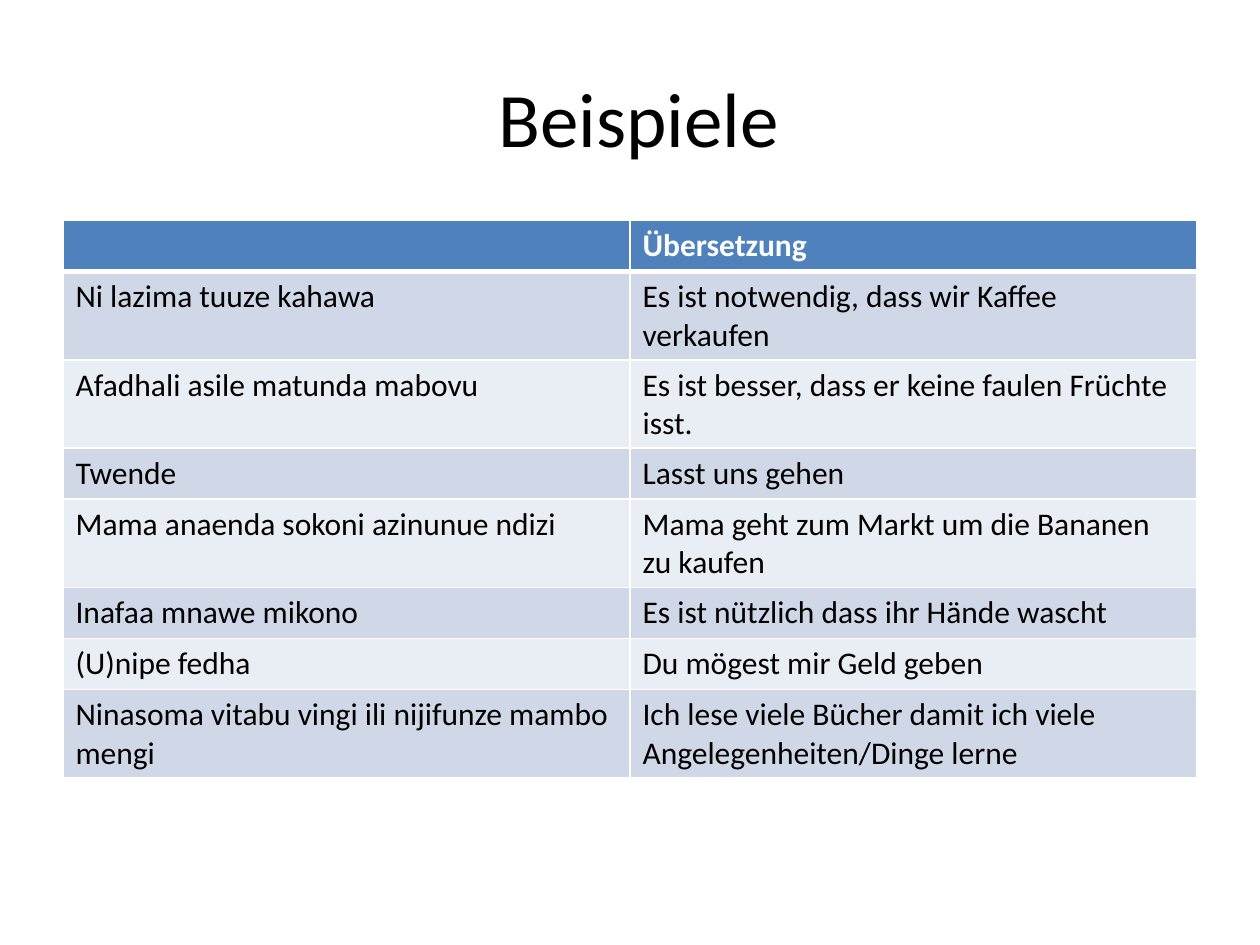
from lxml import etree
from pptx import Presentation
from pptx.dml.color import RGBColor
from pptx.enum.text import MSO_ANCHOR, PP_ALIGN
from pptx.oxml.ns import qn
from pptx.util import Pt

CENTER = PP_ALIGN.CENTER
MIDDLE = MSO_ANCHOR.MIDDLE
FONT = "Calibri"
WHITE, BLACK = "FFFFFF", "000000"
HEADER_FILL = "4F81BD"
BAND_FILLS = ("E9EDF4", "D0D8E8")

EXAMPLES = [
    ("", "Übersetzung"),
    ("Ni lazima tuuze kahawa", "Es ist notwendig, dass wir Kaffee verkaufen"),
    ("Afadhali asile matunda mabovu", "Es ist besser, dass er keine faulen Früchte isst."),
    ("Twende", "Lasst uns gehen"),
    ("Mama anaenda sokoni azinunue ndizi", "Mama geht zum Markt um die Bananen zu kaufen"),
    ("Inafaa mnawe mikono", "Es ist nützlich dass ihr Hände wascht"),
    ("(U)nipe fedha", "Du mögest mir Geld geben"),
    ("Ninasoma vitabu vingi ili nijifunze mambo mengi",
     "Ich lese viele Bücher damit ich viele Angelegenheiten/Dinge lerne"),
]


def color(value):
    return RGBColor.from_string(value)


def style_font(font, size, value, bold=False):
    font.name = FONT
    font.size = Pt(size)
    font.bold = bold
    font.color.rgb = color(value)


def add_borders(cell, widths):
    properties = cell._tc.get_or_add_tcPr()
    for side, width in widths.items():
        line = etree.SubElement(properties, qn(f"a:ln{side}"), w=str(Pt(width)))
        fill = etree.SubElement(line, qn("a:solidFill"))
        etree.SubElement(fill, qn("a:srgbClr"), val=WHITE)


def add_title(page, text, left, top, width, height):
    box = page.shapes.add_textbox(Pt(left), Pt(top), Pt(width), Pt(height))
    frame = box.text_frame
    frame.word_wrap = True
    frame.vertical_anchor = MIDDLE
    frame.text = text
    para = frame.paragraphs[0]
    para.alignment = CENTER
    style_font(para.runs[0].font, 44, BLACK)


def add_examples(page, rows, left, top, width, row_height):
    columns = len(rows[0])
    table = page.shapes.add_table(
        len(rows), columns, Pt(left), Pt(top), Pt(width), Pt(row_height * len(rows))
    ).table
    for column in table.columns:
        column.width = Pt(width / columns)
    for row_index, texts in enumerate(rows):
        table.rows[row_index].height = Pt(row_height)
        header = row_index == 0
        widths = {"L": 1, "R": 1, "T": 3 if row_index == 1 else 1, "B": 3 if header else 1}
        for column_index, text in enumerate(texts):
            cell = table.cell(row_index, column_index)
            add_borders(cell, widths)
            cell.fill.solid()
            cell.fill.fore_color.rgb = color(HEADER_FILL if header else BAND_FILLS[row_index % 2])
            cell.text_frame.text = text
            for span in cell.text_frame.paragraphs[0].runs:
                style_font(span.font, 18, WHITE if header else BLACK, header)


def main():
    deck = Presentation()
    deck.slide_width, deck.slide_height = Pt(720), Pt(540)
    page = deck.slides.add_slide(deck.slide_layouts[6])
    add_title(page, " Beispiele", 36, 21.6, 648, 90)
    add_examples(page, EXAMPLES, 36, 126, 648, 29.2)
    deck.save("out.pptx")


if __name__ == "__main__":
    main()
